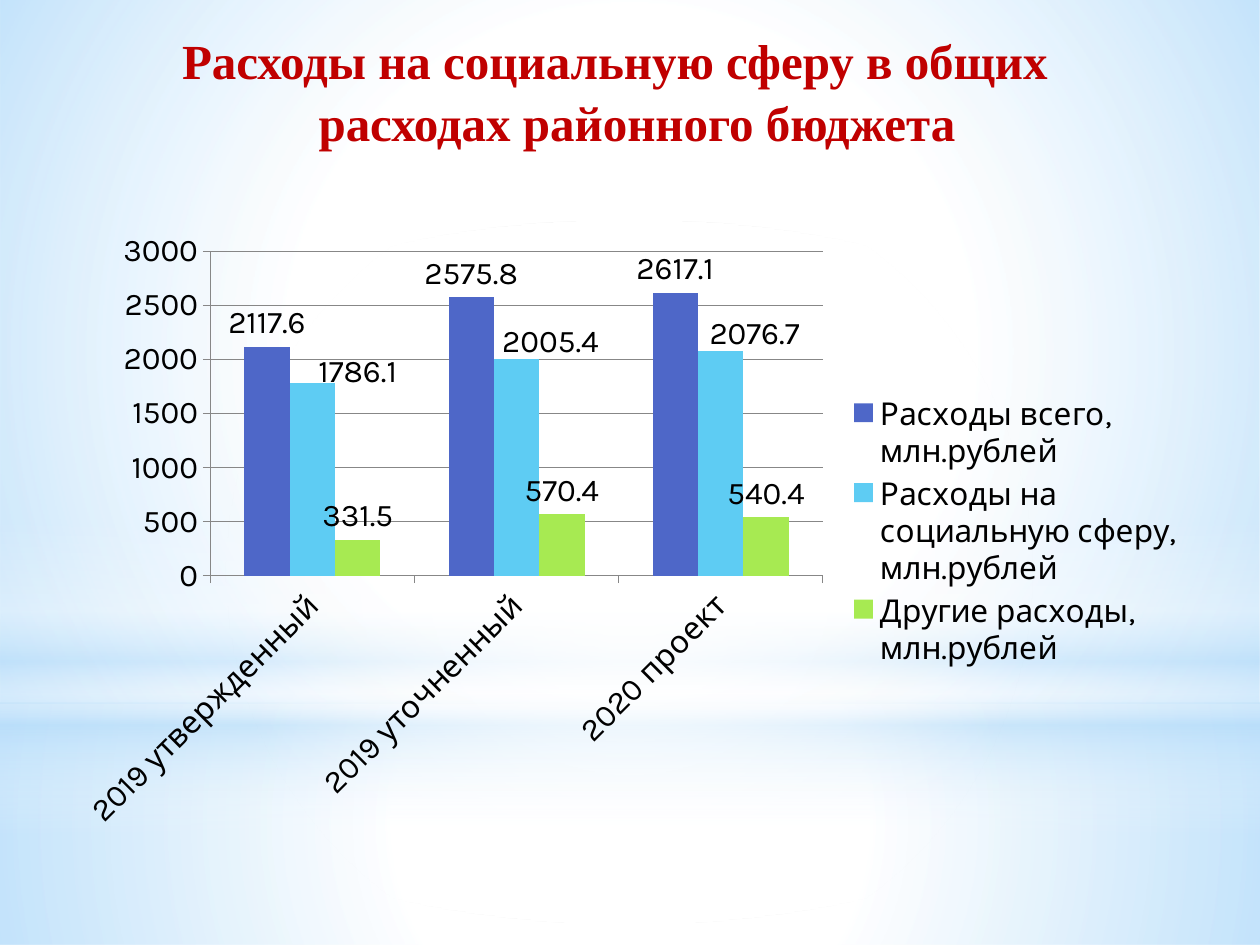
from dataclasses import dataclass
from lxml import etree
from pptx import Presentation
from pptx.chart.data import CategoryChartData as Data
from pptx.dml.color import RGBColor as Rgb
from pptx.enum.chart import XL_CHART_TYPE as Kind, XL_LABEL_POSITION as Spot
from pptx.enum.chart import XL_LEGEND_POSITION as Side, XL_TICK_MARK as Tick
from pptx.enum.shapes import MSO_SHAPE as Geo
from pptx.enum.text import MSO_ANCHOR as Anchor, PP_ALIGN as Align
from pptx.oxml import parse_xml
from pptx.oxml.ns import nsdecls, qn
from pptx.util import Inches, Pt


@dataclass(frozen=True)
class Theme:
    white: str = "FFFFFF"
    sky: str = "B4DCFA"
    red: str = "C00000"
    ink: str = "000000"
    grid: str = "878787"
    bars: tuple = ("4E67C8", "5ECCF3", "A7EA52")
    serif: str = "Times New Roman"
    sans: str = "Karla"
    head: int = 28
    body: int = 18


THEME = Theme()
WIDE, HIGH = 10, 7.5
TITLE = "Расходы на социальную сферу в общих расходах районного бюджета"
CATS = ("2019 утвержденный", "2019 уточненный", "2020 проект")
ROWS = (
    ("Расходы всего, млн.рублей", (2117.6, 2575.8, 2617.1), "General"),
    ("Расходы на социальную сферу, млн.рублей", (1786.1, 2005.4, 2076.7), "General"),
    ("Другие расходы, млн.рублей", (331.5, 570.4, 540.4), "0.0"),
)
SHIFTS = ((0.04, 0.02), (0.03, 0.01), (0.03, 0.01))
PLOT = {"x": 0.13, "y": 0.05, "w": 0.54, "h": 0.52}


def place(left, top, width, height):
    """Turn shares of the slide into lengths."""
    return (Inches(left * WIDE), Inches(top * HIGH),
            Inches(width * WIDE), Inches(height * HIGH))


def blend(shape, stops, round_fill=True):
    """Fill with (position, colour, opacity) stops, given in percent."""
    marks = "".join(
        f'<a:gs pos="{pos * 1000}"><a:srgbClr val="{tint}">'
        f'<a:alpha val="{alpha * 1000}"/></a:srgbClr></a:gs>'
        for pos, tint, alpha in stops)
    rect = '<a:fillToRect l="50000" t="50000" r="50000" b="50000"/>'
    way = (f'<a:path path="circle">{rect}</a:path>' if round_fill
           else '<a:lin ang="5400000" scaled="0"/>')
    fill = parse_xml(f'<a:gradFill {nsdecls("a")} rotWithShape="1">'
                     f'<a:gsLst>{marks}</a:gsLst>{way}</a:gradFill>')
    shape.element.spPr.find(qn("a:prstGeom")).addnext(fill)


def add_sky(slide):
    white, sky = THEME.white, THEME.sky
    split = 0.744
    parts = (
        (Geo.RECTANGLE, (0, split, 1, 1 - split),
         ((0, white, 91), (37, white, 76), (100, sky, 79)), True),
        (Geo.RECTANGLE, (0, 0, 1, split),
         ((0, white, 89), (48, white, 62), (100, sky, 79)), True),
        (Geo.RECTANGLE, (0, 0.55, 1, 1 / 3),
         ((0, white, 0), (29, white, 30), (45, sky, 40),
          (55, white, 26), (65, sky, 60), (100, white, 0)), False),
        (Geo.OVAL, (0, 0.233, 1, split),
         ((0, white, 100), (56, white, 0)), True),
    )
    for form, box, stops, round_fill in parts:
        shape = slide.shapes.add_shape(form, *place(*box))
        shape.shadow.inherit = False
        shape.line.fill.background()
        blend(shape, stops, round_fill)


def add_title(slide, box):
    frame = slide.shapes.add_textbox(*place(*box)).text_frame
    frame.word_wrap = True
    frame.vertical_anchor = Anchor.TOP
    para = frame.paragraphs[0]
    para.text = TITLE
    para.alignment = Align.CENTER
    para.line_spacing = 1.05
    font = para.font
    font.name, font.size, font.bold = THEME.serif, Pt(THEME.head), True
    font.color.rgb = Rgb.from_string(THEME.red)
    props = para._p.get_or_add_pPr()
    props.set("marL", str(Inches(0.35)))
    props.set("indent", str(-Inches(0.35)))


def layout(spots, inner=False):
    """Make a manual chart layout from shares of the chart."""
    node = parse_xml(f'<c:layout {nsdecls("c")}><c:manualLayout/></c:layout>')
    items = dict(spots)
    if inner:
        items = {"layoutTarget": "inner", "xMode": "edge", "yMode": "edge", **items}
    for key, val in items.items():
        etree.SubElement(node[0], qn(f"c:{key}")).set("val", str(val))
    return node


def style_axes(chart):
    for axis in (chart.category_axis, chart.value_axis):
        axis.major_tick_mark = Tick.OUTSIDE
        axis.minor_tick_mark = Tick.NONE
        axis.format.line.color.rgb = Rgb.from_string(THEME.grid)
    names = chart.category_axis.tick_labels.font
    names.size = Pt(THEME.body)
    body = chart.category_axis._element.find(f'{qn("c:txPr")}/{qn("a:bodyPr")}')
    body.set("rot", "-2700000")
    axis = chart.value_axis
    axis.minimum_scale, axis.maximum_scale, axis.major_unit = 0, 3000, 500
    axis.has_major_gridlines = True
    axis.major_gridlines.format.line.color.rgb = Rgb.from_string(THEME.grid)


def style_bars(plot):
    plot.gap_width, plot.overlap = 150, 0
    plot.vary_by_categories = False
    for bars, tint, row in zip(plot.series, THEME.bars, ROWS):
        bars.format.fill.solid()
        bars.format.fill.fore_color.rgb = Rgb.from_string(tint)
        bars.invert_if_negative = False
        tags = bars.data_labels
        tags.show_value = True
        tags.position = Spot.OUTSIDE_END
        tags.number_format, tags.number_format_is_linked = row[2], False
    bars = plot.series[1]
    for num, (x, y) in enumerate(SHIFTS):
        bars.points[num].data_label.position = Spot.OUTSIDE_END
        tag = bars.data_labels._element.findall(qn("c:dLbl"))[num]
        tag.find(qn("c:idx")).addnext(layout({"x": x, "y": y}))


def add_bars(slide, box):
    data = Data()
    data.categories = CATS
    for name, vals, _ in ROWS:
        data.add_series(name, vals)
    chart = slide.shapes.add_chart(Kind.COLUMN_CLUSTERED, *place(*box), data).chart
    chart.has_title = False
    chart.font.name, chart.font.size = THEME.sans, Pt(THEME.body)
    chart.font.color.rgb = Rgb.from_string(THEME.ink)
    chart.has_legend = True
    chart.legend.position = Side.RIGHT
    chart.legend.include_in_layout = False
    style_axes(chart)
    style_bars(chart.plots[0])
    area = chart._chartSpace.chart.plotArea
    for old in area.findall(qn("c:layout")):
        area.remove(old)
    area.insert(0, layout(PLOT, inner=True))


def main():
    deck = Presentation()
    deck.slide_width, deck.slide_height = Inches(WIDE), Inches(HIGH)
    slide = deck.slides.add_slide(deck.slide_layouts[6])
    add_sky(slide)
    add_title(slide, (0.098, 0.023, 0.78, 0.195))
    add_bars(slide, (0.05, 0.233, 0.9, 0.66))
    deck.save("out.pptx")


if __name__ == "__main__":
    main()
